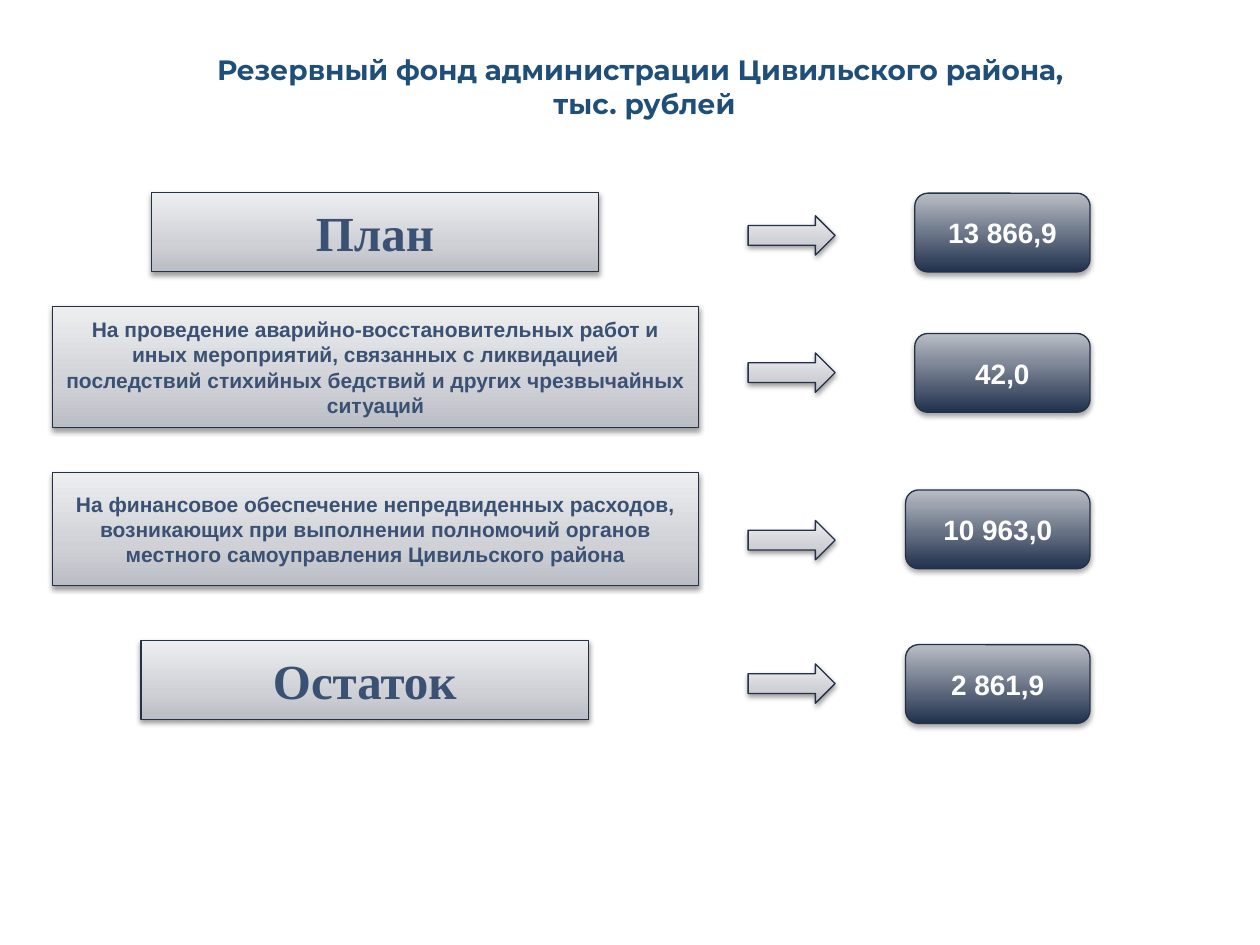
from dataclasses import dataclass
from lxml.etree import SubElement
from pptx import Presentation
from pptx.dml.color import RGBColor
from pptx.enum.shapes import MSO_SHAPE
from pptx.enum.text import MSO_ANCHOR, MSO_AUTO_SIZE, PP_ALIGN
from pptx.oxml.ns import qn
from pptx.util import Pt

COLORS = {
    "title": "1F4E79", "label": "3A5173", "value": "FFFFFF", "line": "243147",
    "dark": "21314D", "dark_top": "B9BDC5",
    "light": "BABDC4", "light_mid": "CFD1D6", "light_top": "EDEEF0",
    "shadow": "000000",
}


@dataclass(frozen=True)
class Style:
    stops: tuple
    shadow_alpha: int
    shadow_dist: float


@dataclass(frozen=True)
class Box:
    left: float
    top: float
    width: float
    height: float


@dataclass(frozen=True)
class Row:
    label: str
    label_box: Box
    font: str
    size: float
    arrow_top: float
    value: str
    value_box: Box


LIGHT = Style(((0, "light"), (35, "light_mid"), (100, "light_top")), 38, 1.6)
DARK = Style(((0, "dark"), (100, "dark_top")), 35, 1.8)
ARROW_LEFT, ARROW_WIDTH, ARROW_HEIGHT = 427.5, 49.7, 22.5

ROWS = [
    Row("План", Box(86.4, 110.1, 255.8, 45), "Times New Roman", 28,
        123.3, "13 866,9", Box(522.7, 110.4, 100.2, 45)),
    Row("На проведение аварийно-восстановительных работ и иных мероприятий, "
        "связанных с ликвидацией последствий стихийных бедствий и других "
        "чрезвычайных ситуаций", Box(30, 175, 369.2, 69.5), "Arial", 12,
        201.7, "42,0", Box(522.7, 190.6, 100.2, 45)),
    Row("На финансовое обеспечение непредвиденных расходов, возникающих при "
        "выполнении полномочий органов местного самоуправления Цивильского "
        "района", Box(30, 270.2, 369.2, 64.5), "Arial", 12,
        297.4, "10 963,0", Box(517.5, 280, 105.4, 45)),
    Row("Остаток", Box(80.6, 366, 255.8, 45), "Times New Roman", 28,
        379.4, "2 861,9", Box(517.5, 368.4, 105.4, 45)),
]


def rgb(name: str) -> RGBColor:
    return RGBColor.from_string(COLORS[name])


def place(sp, box: Box) -> None:
    sp.left, sp.top = Pt(box.left), Pt(box.top)
    sp.width, sp.height = Pt(box.width), Pt(box.height)


def write(sp, text: str, *, font: str, size: float, color: str,
          anchor=MSO_ANCHOR.MIDDLE) -> None:
    tf = sp.text_frame
    tf.word_wrap = True
    tf.auto_size = MSO_AUTO_SIZE.NONE
    tf.vertical_anchor = anchor
    p = tf.paragraphs[0]
    p.text = text
    p.alignment = PP_ALIGN.CENTER
    for r in p.runs:
        r.font.name = font
        r.font.size = Pt(size)
        r.font.bold = True
        r.font.color.rgb = rgb(color)


def add_block(slide, kind: MSO_SHAPE, box: Box, style: Style):
    sp = slide.shapes.add_shape(kind, 0, 0, 0, 0)
    place(sp, box)
    sp.fill.gradient()
    sp.fill.gradient_angle = 90
    sp.line.color.rgb = rgb("line")
    sp.line.width = Pt(0.75)
    sp.shadow.inherit = False

    sp_pr = sp._element.spPr
    stops = sp_pr.find(qn("a:gradFill")).find(qn("a:gsLst"))
    for old in list(stops):
        stops.remove(old)
    for pos, color in style.stops:
        gs = SubElement(stops, qn("a:gs"), pos=str(pos * 1000))
        SubElement(gs, qn("a:srgbClr"), val=COLORS[color])

    shadow = SubElement(sp_pr.find(qn("a:effectLst")), qn("a:outerShdw"),
                        blurRad=str(Pt(3.1)), dist=str(Pt(style.shadow_dist)),
                        dir="5400000", rotWithShape="0")
    clr = SubElement(shadow, qn("a:srgbClr"), val=COLORS["shadow"])
    SubElement(clr, qn("a:alpha"), val=str(style.shadow_alpha * 1000))
    return sp


def add_row(slide, row: Row) -> None:
    label = add_block(slide, MSO_SHAPE.RECTANGLE, row.label_box, LIGHT)
    write(label, row.label, font=row.font, size=row.size, color="label")
    arrow_box = Box(ARROW_LEFT, row.arrow_top, ARROW_WIDTH, ARROW_HEIGHT)
    add_block(slide, MSO_SHAPE.RIGHT_ARROW, arrow_box, LIGHT)
    value = add_block(slide, MSO_SHAPE.ROUNDED_RECTANGLE, row.value_box, DARK)
    write(value, row.value, font="Arial", size=16, color="value")


def main() -> None:
    prs = Presentation()
    prs.slide_width, prs.slide_height = Pt(720), Pt(540)
    slide = prs.slides.add_slide(prs.slide_layouts[5])
    title = slide.shapes.title
    place(title, Box(67.7, 15.8, 601.2, 52.6))
    title.text_frame.margin_bottom = 0
    write(title, "Резервный фонд администрации Цивильского района, \vтыс. рублей",
          font="Montserrat", size=16, color="title", anchor=MSO_ANCHOR.BOTTOM)
    for row in ROWS:
        add_row(slide, row)
    prs.save("out.pptx")


if __name__ == "__main__":
    main()
